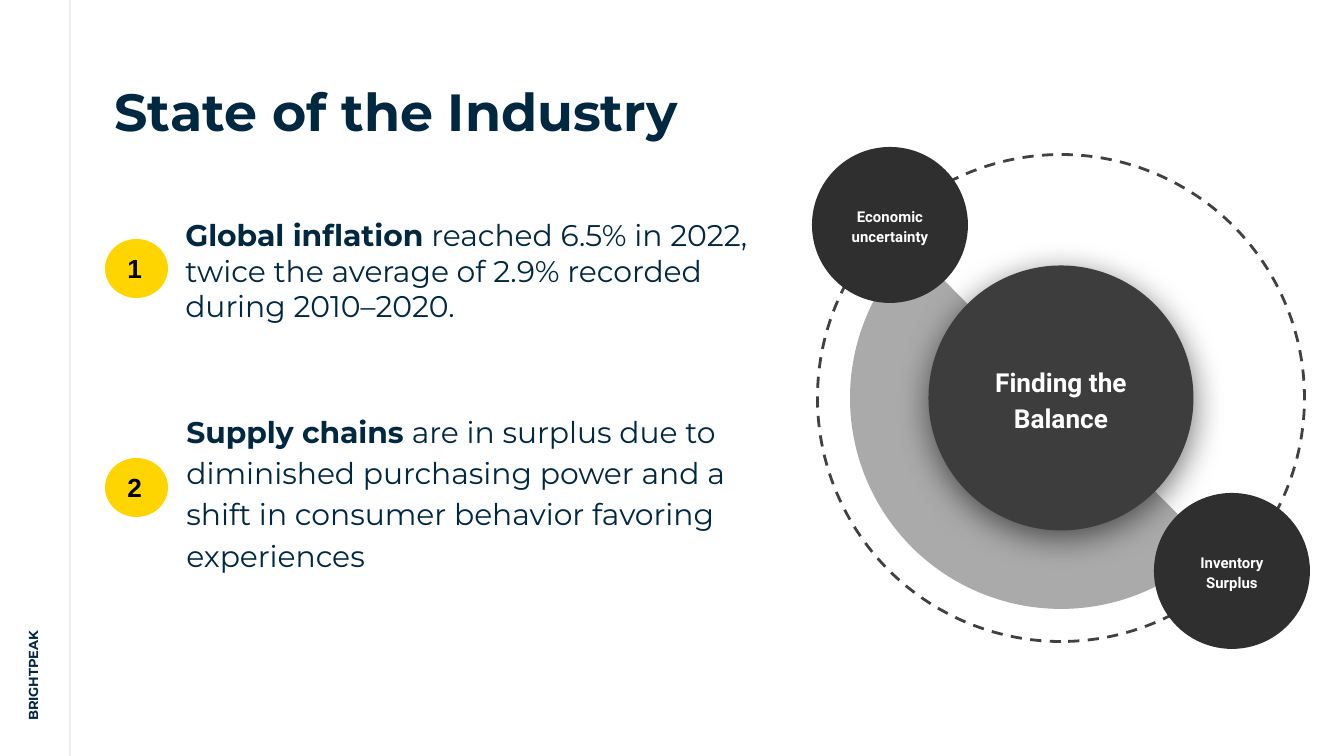
from lxml import etree
from pptx import Presentation
from pptx.dml.color import RGBColor
from pptx.enum.dml import MSO_LINE
from pptx.enum.shapes import MSO_CONNECTOR, MSO_SHAPE
from pptx.enum.text import MSO_ANCHOR, MSO_AUTO_SIZE, PP_ALIGN
from pptx.oxml.ns import qn
from pptx.util import Emu, Pt

OVAL, PIE = MSO_SHAPE.OVAL, MSO_SHAPE.CHORD
PIE = MSO_SHAPE.PIE
STRAIGHT = MSO_CONNECTOR.STRAIGHT
DASH = MSO_LINE.DASH
TOP, MIDDLE = MSO_ANCHOR.TOP, MSO_ANCHOR.MIDDLE
LEFT, CENTER = PP_ALIGN.LEFT, PP_ALIGN.CENTER
FIXED = MSO_AUTO_SIZE.NONE

SCALE = 914400 / 134.4
WIDE, HIGH = 1344, 756
NAVY, YELLOW, WHITE, BLACK = "002840", "FFD500", "FFFFFF", "000000"
HUB = (1061, 398)

POINTS = [
    ("1", 239, (105, 203, 668, 136), 1.0, "Global inflation",
     " reached 6.5% in 2022, twice the average of 2.9% recorded during 2010–2020."),
    ("2", 458, (106, 395, 677, 188), 1.15, "Supply chains",
     " are in surplus due to diminished purchasing power and a shift in "
     "consumer behavior favoring experiences"),
]
SIDES = [(-1, "Economic uncertainty"), (1, "Inventory Surplus")]


def px(n):
    return Emu(round(n * SCALE))


def color(code):
    return RGBColor.from_string(code)


def around(mid, wide, high):
    """Give the box of a size centred on a point."""
    return mid[0] - wide / 2, mid[1] - high / 2, wide, high


def write(shape, runs, size, name, tone, anchor=TOP, align=LEFT, space=1.0):
    """Fill a shape with one paragraph of (text, bold) runs."""
    frame = shape.text_frame
    look = {"word_wrap": True, "auto_size": FIXED, "vertical_anchor": anchor}
    for side in ("left", "right", "top", "bottom"):
        look["margin_" + side] = Pt(7.2)
    for key, value in look.items():
        setattr(frame, key, value)
    para = frame.paragraphs[0]
    para.alignment, para.line_spacing = align, space
    for text, bold in runs:
        run = para.add_run()
        run.text = text
        for key, value in {"size": Pt(size), "name": name, "bold": bold}.items():
            setattr(run.font, key, value)
        run.font.color.rgb = color(tone)
    return para


def textbox(slide, box):
    return slide.shapes.add_textbox(*map(px, box))


def shape(slide, kind, box, fill=None):
    item = slide.shapes.add_shape(kind, *map(px, box))
    item.shadow.inherit = False
    item.line.fill.background()
    if fill:
        item.fill.solid()
        item.fill.fore_color.rgb = color(fill)
    else:
        item.fill.background()
    return item


def glow(item):
    """Add a soft shadow below a shape."""
    effects = item.element.spPr.find(qn("a:effectLst"))
    shade = etree.SubElement(effects, qn("a:outerShdw"), blurRad=str(Pt(18)),
                             dist=str(Pt(4)), dir="5400000",
                             algn="bl", rotWithShape="0")
    tone = etree.SubElement(shade, qn("a:srgbClr"), val=BLACK)
    etree.SubElement(tone, qn("a:alpha"), val="55000")


def margin(slide):
    """Draw the left rule and the upright name beside it."""
    rule = slide.shapes.add_connector(STRAIGHT, px(70), 0, px(70), px(HIGH))
    rule.line.color.rgb = color("EFEFEF")
    rule.line.width = Pt(0.75)
    etree.SubElement(rule.element.spPr, qn("a:effectLst"))
    brand = textbox(slide, (-206, 460, 478, 70))
    brand.rotation = 270
    write(brand, [("BRIGHTPEAK", True)], 7, "Montserrat", NAVY, MIDDLE)


def heading(slide):
    title = slide.shapes.title
    box = dict(zip(("left", "top", "width", "height"), (101, 66, 847, 85)))
    for key, value in box.items():
        setattr(title, key, px(value))
    write(title, [("State of the Industry", True)], 28, "Montserrat", NAVY)


def point(slide, mark, top, box, space, lead, rest):
    """Draw a numbered badge and its statement."""
    para = write(textbox(slide, box), [(lead, True), (rest, False)],
                 16, "Montserrat", NAVY, space=space)
    props = para._p.get_or_add_pPr()
    props.set("marL", str(Pt(36)))
    props.set("indent", "0")
    badge = shape(slide, OVAL, (105, top, 63, 59), YELLOW)
    write(badge, [(mark, True)], 14, "Arial", BLACK, MIDDLE)


def disc(slide, mid, size, fill, text, area, points):
    """Draw a round label and return its circle."""
    item = shape(slide, OVAL, around(mid, size, size), fill)
    write(textbox(slide, around(mid, *area)), [(text, True)], points,
          "Roboto", WHITE, MIDDLE, CENTER, 1.15)
    return item


def balance(slide):
    ring = shape(slide, OVAL, around(HUB, 487, 487))
    ring.rotation = 270
    ring.line.color.rgb = color("414141")
    ring.line.width = Pt(1.5)
    ring.line.dash_style = DASH
    half = shape(slide, PIE, around(HUB, 422, 422), "AAAAAA")
    half.adjustments[0], half.adjustments[1] = 26.9, 135.11
    glow(disc(slide, HUB, 265, "3D3D3D", "Finding the Balance", (196, 121), 14))
    for sign, text in SIDES:
        mid = HUB[0] + sign * 171, HUB[1] + sign * 173
        disc(slide, mid, 156, "2F2F2F", text, (112, 106), 8)


def main():
    deck = Presentation()
    deck.slide_width, deck.slide_height = px(WIDE), px(HIGH)
    slide = deck.slides.add_slide(deck.slide_layouts[5])
    margin(slide)
    heading(slide)
    for item in POINTS:
        point(slide, *item)
    balance(slide)
    deck.save("out.pptx")


if __name__ == "__main__":
    main()
